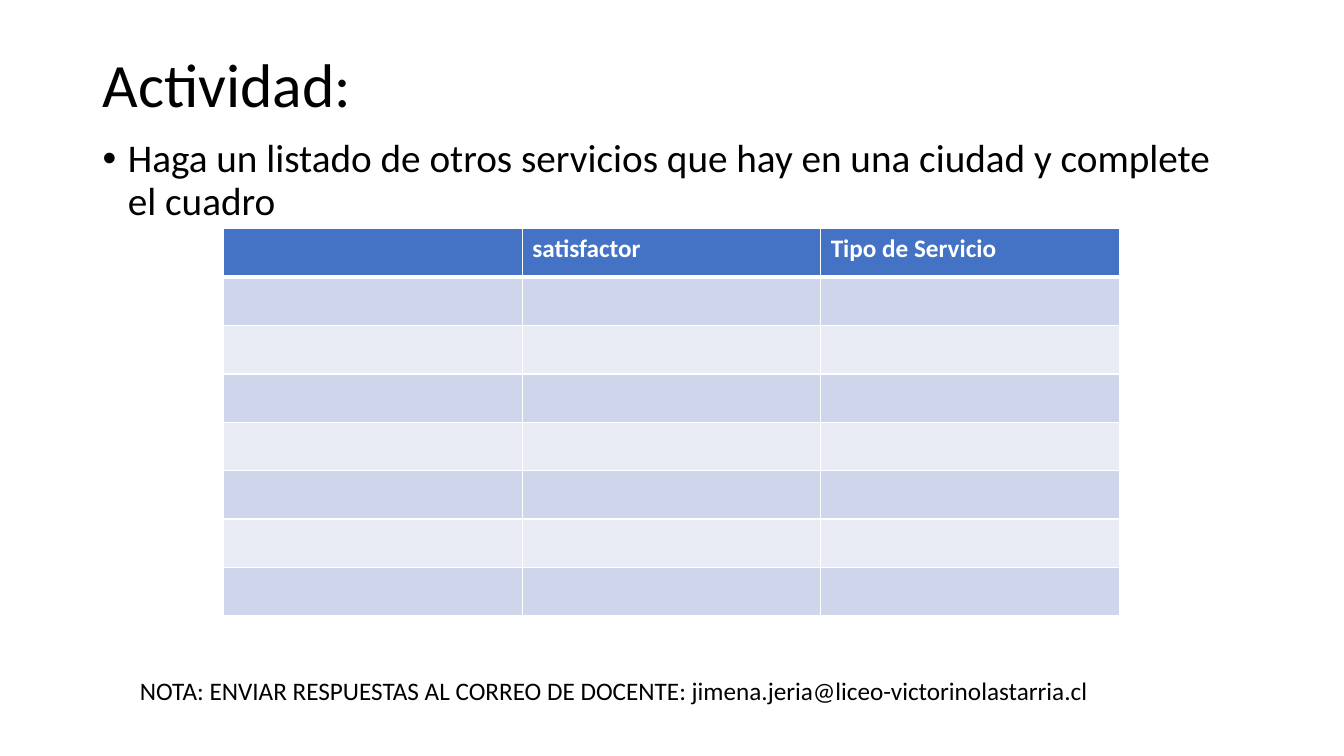
from lxml import etree
from pptx import Presentation
from pptx import util as u
from pptx.dml.color import RGBColor
from pptx.enum import text
from pptx.oxml import ns

PX = 9144  # EMU per px, 100 px to the inch
FONT = "Calibri"
BLACK, WHITE, HEADER_BLUE = "000000", "FFFFFF", "4472C4"
BANDS = ("CFD5EA", "E9EBF5")
HEADINGS = ("", "satisfactor", "Tipo de Servicio")
ROWS, ROW_HEIGHT, COLUMN_WIDTH = 8, 48, 296


def px(*lengths):
    return [u.Emu(length * PX) for length in lengths]


def color(hex_value):
    return RGBColor.from_string(hex_value)


def set_all(target, values):
    for name, value in values.items():
        setattr(target, name, value)


def write(paragraph, words, size, ink=BLACK, bold=False):
    run = paragraph.add_run()
    run.text = words
    set_all(run.font, {"name": FONT, "size": u.Pt(size), "bold": bold})
    run.font.color.rgb = color(ink)


def add_text(slide, box, words, size, frame_format, paragraph_format):
    frame = slide.shapes.add_textbox(*px(*box)).text_frame
    set_all(frame, frame_format)
    paragraph = frame.paragraphs[0]
    set_all(paragraph, paragraph_format)
    write(paragraph, words, size)
    return paragraph


def add_bullet(paragraph, indent):
    properties = paragraph._p.get_or_add_pPr()
    properties.set("marL", str(indent * PX))
    properties.set("indent", str(-indent * PX))
    etree.SubElement(properties, ns.qn("a:buFont")).set("typeface", "Arial")
    etree.SubElement(properties, ns.qn("a:buChar")).set("char", "•")


def add_borders(cell, widths):
    properties = cell._tc.get_or_add_tcPr()
    for place, (side, width) in enumerate(widths.items()):
        line = etree.Element(ns.qn(f"a:ln{side}"), w=str(u.Pt(width)))
        fill = etree.SubElement(line, ns.qn("a:solidFill"))
        etree.SubElement(fill, ns.qn("a:srgbClr")).set("val", WHITE)
        properties.insert(place, line)


def add_services_table(slide, left, top):
    columns = len(HEADINGS)
    size = (columns * COLUMN_WIDTH, ROWS * ROW_HEIGHT)
    services = slide.shapes.add_table(ROWS, columns, *px(left, top, *size)).table
    for row in range(ROWS):
        for column, heading in enumerate(HEADINGS):
            cell = services.cell(row, column)
            cell.fill.solid()
            cell.fill.fore_color.rgb = color(BANDS[(row - 1) % 2] if row else HEADER_BLUE)
            # A thicker rule parts the header from the rows below
            add_borders(cell, {"L": 1, "R": 1,
                               "T": 3 if row == 1 else 1,
                               "B": 3 if row == 0 else 1})
            if row == 0 and heading:
                write(cell.text_frame.paragraphs[0], heading, 18, WHITE, True)


def main():
    deck = Presentation()
    set_all(deck, dict(zip(("slide_width", "slide_height"), px(1333, 750))))
    slide = deck.slides.add_slide(deck.slide_layouts[6])

    # Title and task
    add_text(slide, (92, 40, 1150, 93), "Actividad:", 44,
             {"word_wrap": True, "vertical_anchor": text.MSO_ANCHOR.MIDDLE},
             {"line_spacing": 0.9})
    task = add_text(slide, (92, 133, 1150, 516),
                    "Haga un listado de otros servicios que hay en una ciudad y complete el cuadro",
                    28, {"word_wrap": True},
                    {"line_spacing": 0.9, "space_before": u.Pt(10)})
    add_bullet(task, 25)

    # Table to fill in
    add_services_table(slide, 222, 227)

    # Note on where to send the answers
    add_text(slide, (129, 665, 966, 40),
             "NOTA: ENVIAR RESPUESTAS AL CORREO DE DOCENTE: jimena.jeria@liceo-victorinolastarria.cl",
             18, {"word_wrap": False, "auto_size": text.MSO_AUTO_SIZE.SHAPE_TO_FIT_TEXT}, {})

    deck.save("out.pptx")


if __name__ == "__main__":
    main()
